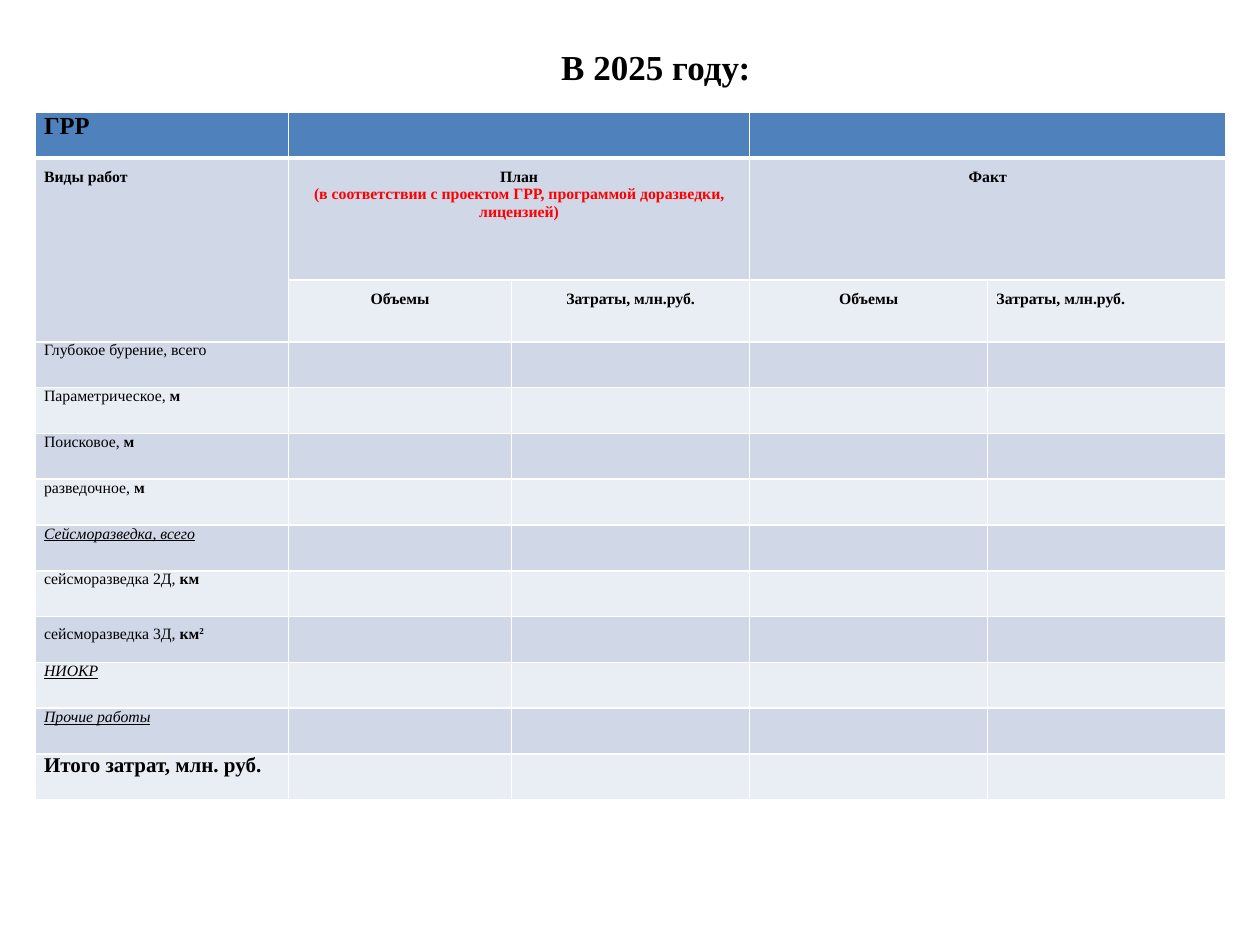
from pptx import Presentation
from pptx import util as u
from pptx.dml.color import RGBColor
from pptx.enum import text
from pptx.oxml import parse_xml
from pptx.oxml.ns import nsdecls

Inches, Pt = u.Inches, u.Pt
FONT = "Times New Roman"
BLACK, RED, WHITE = "000000", "FF0000", "FFFFFF"
HEADER, BAND_DARK, BAND_LIGHT = "4F81BD", "D0D8E8", "E9EDF4"
CENTER = text.PP_ALIGN.CENTER
HEAD_SPACING = Pt(15.8)

TABLE_HEIGHT = 5.46
COLUMN_WIDTHS = [2.01, 1.77, 1.89, 1.89, 1.89]
PLAN_HEIGHT, SUBHEAD_HEIGHT = 0.97, 0.49

BOLD = dict(bold=True)
GROUP = dict(italic=True, underline=True)

# Work types: each row is a list of (text, format) runs
WORKS = [
    [("Глубокое бурение, всего", {})],
    [("Параметрическое,", {}), (" м", BOLD)],
    [("Поисковое, ", {}), ("м", BOLD)],
    [("разведочное, ", {}), ("м", BOLD)],
    [("Сейсморазведка, всего", GROUP)],
    [("сейсморазведка 2Д,", {}), (" км", BOLD)],
    [("сейсморазведка 3Д, ", {}), ("км", BOLD),
     ("2", dict(bold=True, superscript=True))],
    [("НИОКР", GROUP)],
    [("Прочие работы", GROUP)],
    [("Итого затрат, млн. руб.", dict(bold=True, size=12))],
]
SPACED_WORK = 6  # the 3D survey row has 1.5 line spacing


def color(hex_value):
    return RGBColor.from_string(hex_value)


def add_text(paragraph, content, size=9, bold=False, italic=False,
             underline=False, fill=BLACK, superscript=False,
             align=None, spacing=None):
    run = paragraph.add_run()
    run.text = content
    font = run.font
    font.name, font.size = FONT, Pt(size)
    font.bold, font.italic, font.underline = bold, italic, underline
    font.color.rgb = color(fill)
    if superscript:
        run._r.get_or_add_rPr().set("baseline", "30000")
    if align is not None:
        paragraph.alignment = align
    if spacing is not None:
        paragraph.line_spacing = spacing


def add_border(cell, side, width):
    cell._tc.get_or_add_tcPr().append(parse_xml(
        f'<a:ln{side} {nsdecls("a")} w="{Pt(width)}"><a:solidFill>'
        f'<a:srgbClr val="{WHITE}"/></a:solidFill></a:ln{side}>'))


def format_cell(cell, row):
    cell.margin_left = cell.margin_right = Inches(0.07)
    cell.margin_top = cell.margin_bottom = 0
    # A thick line separates the header row from the body
    widths = {"L": 1, "R": 1, "T": 3 if row == 1 else 1, "B": 3 if row == 0 else 1}
    for side, width in widths.items():
        add_border(cell, side, width)
    band = BAND_DARK if row % 2 else BAND_LIGHT
    cell.fill.solid()
    cell.fill.fore_color.rgb = color(HEADER if row == 0 else band)


def add_title(slide):
    title = slide.shapes.title
    title.left, title.top = Inches(0.91), Inches(0.3)
    title.width, title.height = Inches(8.59), Inches(0.46)
    title.text_frame.vertical_anchor = text.MSO_ANCHOR.MIDDLE
    add_text(title.text_frame.paragraphs[0], "В 2025 году:",
             size=20, bold=True, align=CENTER)


def add_grid(slide):
    work_height = (TABLE_HEIGHT - PLAN_HEIGHT - SUBHEAD_HEIGHT) / (len(WORKS) + 1)
    heights = [work_height, PLAN_HEIGHT, SUBHEAD_HEIGHT] + [work_height] * len(WORKS)
    grid = slide.shapes.add_table(
        len(heights), len(COLUMN_WIDTHS), Inches(0.28), Inches(0.89),
        Inches(sum(COLUMN_WIDTHS)), Inches(TABLE_HEIGHT)).table
    for column, width in zip(grid.columns, COLUMN_WIDTHS):
        column.width = Inches(width)
    for index, height in enumerate(heights):
        grid.rows[index].height = Inches(height)
        for column in range(len(COLUMN_WIDTHS)):
            format_cell(grid.cell(index, column), index)
    # Plan and fact each span two columns
    for row in (0, 1):
        for column in (1, 3):
            grid.cell(row, column).merge(grid.cell(row, column + 1))
    grid.cell(1, 0).merge(grid.cell(2, 0))
    return grid


def fill_headings(grid):
    headings = [
        (0, 0, "ГРР", 14, None),
        (1, 0, "Виды работ", 9, None),
        (1, 1, "План", 9, CENTER),
        (1, 3, "Факт", 9, CENTER),
        (2, 1, "Объемы", 9, CENTER),
        (2, 2, "Затраты, млн.руб.", 9, CENTER),
        (2, 3, "Объемы", 9, CENTER),
        (2, 4, "Затраты, млн.руб.", 9, None),
    ]
    for row, column, label, size, align in headings:
        add_text(grid.cell(row, column).text_frame.paragraphs[0], label,
                 size=size, bold=True, align=align, spacing=HEAD_SPACING)
    add_text(grid.cell(1, 1).text_frame.add_paragraph(),
             "(в соответствии с проектом ГРР, программой доразведки, лицензией)",
             bold=True, fill=RED, align=CENTER)


def fill_works(grid):
    for index, runs in enumerate(WORKS):
        paragraph = grid.cell(index + 3, 0).text_frame.paragraphs[0]
        for content, style in runs:
            add_text(paragraph, content, **style,
                     spacing=1.5 if index == SPACED_WORK else None)


def main():
    deck = Presentation()
    deck.slide_width, deck.slide_height = Inches(10), Inches(7.5)
    slide = deck.slides.add_slide(deck.slide_layouts[5])
    add_title(slide)
    grid = add_grid(slide)
    fill_headings(grid)
    fill_works(grid)
    deck.save("out.pptx")


if __name__ == "__main__":
    main()
